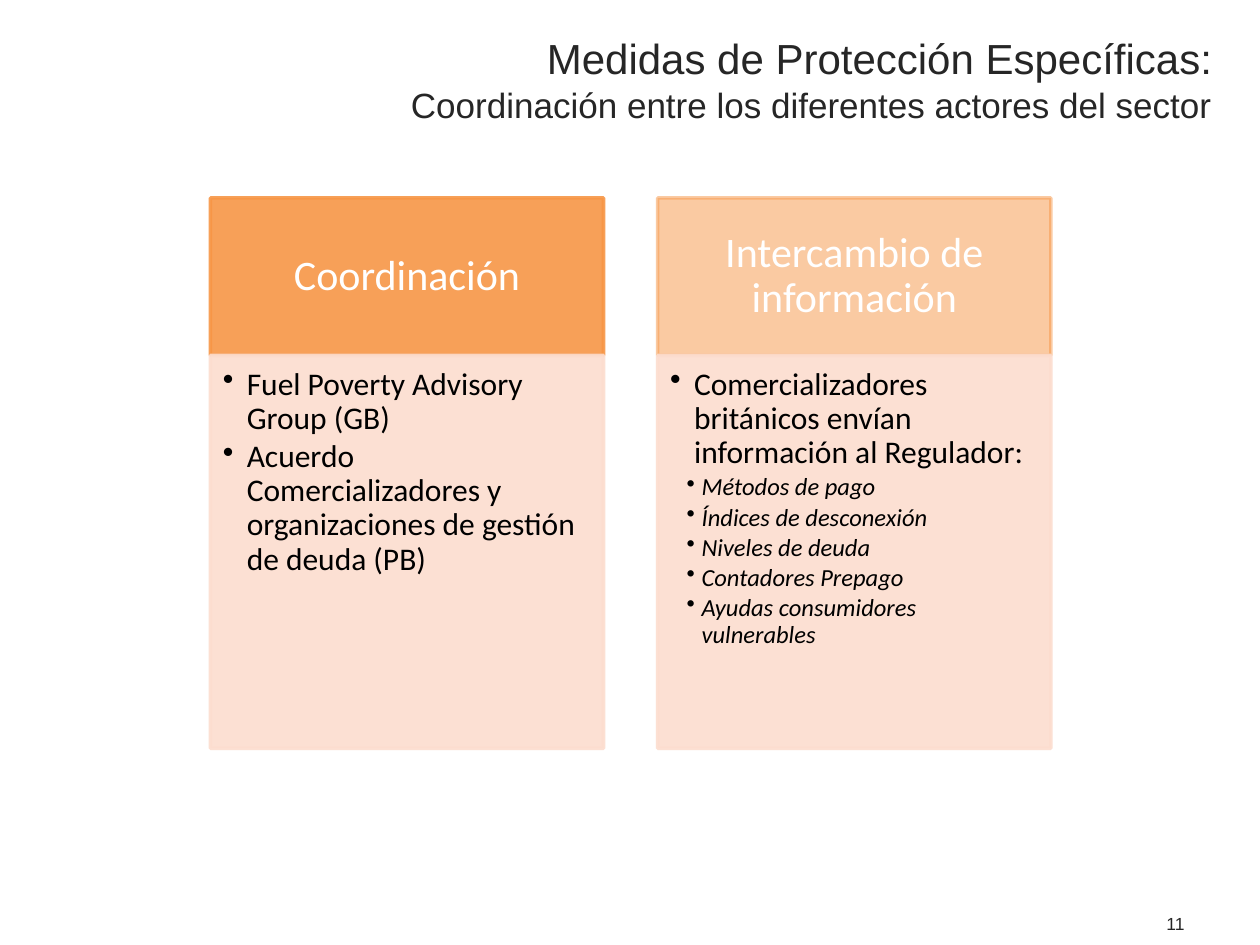
import lxml.etree
import pptx
import pptx.dml.color
import pptx.enum.shapes
import pptx.enum.text
import pptx.oxml.ns
import pptx.util

Inches = pptx.util.Inches
Pt = pptx.util.Pt
ALIGN = pptx.enum.text.PP_ALIGN
ANCHOR = pptx.enum.text.MSO_ANCHOR
ORANGE = pptx.dml.color.RGBColor(0xF7, 0x96, 0x46)
PEACH = pptx.dml.color.RGBColor(0xFC, 0xDD, 0xCF)
WHITE = pptx.dml.color.RGBColor(0xFF, 0xFF, 0xFF)
BLACK = pptx.dml.color.RGBColor(0x00, 0x00, 0x00)
CHARCOAL = pptx.dml.color.RGBColor(0x26, 0x26, 0x26)

COLUMN_WIDTH, COLUMN_GAP = 3.12, 0.43
HEADER_HEIGHT, BODY_HEIGHT = 1.25, 3.12
LEVELS = {
    1: {"size": 18, "italic": False, "margin": 0.19, "hanging": 0.19},
    2: {"size": 14, "italic": True, "margin": 0.25, "hanging": 0.12},
}
COLUMNS = [
    ("Coordinación", 90, [
        (1, "Fuel Poverty Advisory Group (GB)"),
        (1, "Acuerdo Comercializadores y organizaciones de gestión de deuda (PB)"),
    ]),
    ("Intercambio de información", 50, [
        (1, "Comercializadores británicos envían información al Regulador:"),
        (2, "Métodos de pago"),
        (2, "Índices de desconexión"),
        (2, "Niveles de deuda"),
        (2, "Contadores Prepago"),
        (2, "Ayudas consumidores vulnerables"),
    ]),
]


def apply_format(target, **values):
    """Set each given attribute on the target."""
    for name, value in values.items():
        setattr(target, name, value)


def add_run(paragraph, text, size, typeface, color, italic=False):
    """Append a formatted run to a paragraph."""
    run = paragraph.add_run()
    run.text = text
    apply_format(run.font, size=Pt(size), name=typeface, bold=False, italic=italic)
    run.font.color.rgb = color


def set_frame(frame, margins, anchor):
    """Set wrapping, anchor and left, top, right, bottom margins of a text frame."""
    left, top, right, bottom = (Inches(margin) for margin in margins)
    apply_format(frame, word_wrap=True, vertical_anchor=anchor,
                 auto_size=pptx.enum.text.MSO_AUTO_SIZE.NONE, margin_left=left,
                 margin_top=top, margin_right=right, margin_bottom=bottom)


def add_panel(slide, box, color, opacity):
    """Add a rectangle whose fill and line share a colour and an opacity percentage."""
    shape = slide.shapes.add_shape(
        pptx.enum.shapes.MSO_SHAPE.RECTANGLE, *map(Inches, box))
    shape.shadow.inherit = False
    shape.fill.solid()
    shape.line.width = Pt(2)
    for fill in (shape.fill, shape.line.fill):
        fill.solid()
        fill.fore_color.rgb = color
    for element in shape._element.spPr.iter(pptx.oxml.ns.qn("a:srgbClr")):
        lxml.etree.SubElement(
            element, pptx.oxml.ns.qn("a:alpha"), val=str(opacity * 1000))
    return shape


def add_header(slide, box, text, opacity):
    """Add the coloured heading of a column."""
    frame = add_panel(slide, box, ORANGE, opacity).text_frame
    set_frame(frame, (0.19, 0.11, 0.19, 0.11), ANCHOR.MIDDLE)
    paragraph = frame.paragraphs[0]
    apply_format(paragraph, alignment=ALIGN.CENTER, line_spacing=0.9)
    add_run(paragraph, text, 24, "Calibri", WHITE)


def add_bullets(slide, box, items):
    """Add the bulleted body of a column."""
    frame = add_panel(slide, box, PEACH, 90).text_frame
    set_frame(frame, (0.1, 0.1, 0.14, 0.16), ANCHOR.TOP)
    for index, (level, text) in enumerate(items):
        style = LEVELS[level]
        paragraph = frame.add_paragraph() if index else frame.paragraphs[0]
        apply_format(paragraph, level=level, alignment=ALIGN.LEFT, line_spacing=0.9,
                     space_after=Pt(style["size"] * 0.15))
        properties = paragraph._p.get_or_add_pPr()
        properties.set("marL", str(Inches(style["margin"])))
        properties.set("indent", str(-Inches(style["hanging"])))
        lxml.etree.SubElement(properties, pptx.oxml.ns.qn("a:buChar"), char="•")
        add_run(paragraph, text, style["size"], "Calibri", BLACK, style["italic"])


def add_column(slide, left, top, column):
    """Stack a heading on its bulleted body."""
    heading, opacity, items = column
    add_header(slide, (left, top, COLUMN_WIDTH, HEADER_HEIGHT), heading, opacity)
    add_bullets(slide, (left, top + HEADER_HEIGHT, COLUMN_WIDTH, BODY_HEIGHT), items)


def add_title(slide, box):
    """Place the title placeholder with its smaller second line."""
    title = slide.shapes.title
    apply_format(title, **dict(zip(("left", "top", "width", "height"), map(Inches, box))))
    set_frame(title.text_frame, (0.1, 0.05, 0.1, 0.05), ANCHOR.TOP)
    paragraph = title.text_frame.paragraphs[0]
    paragraph.alignment = ALIGN.RIGHT
    add_run(paragraph, "Medidas de Protección Específicas: ", 24, "Arial", CHARCOAL)
    add_run(paragraph, "Coordinación entre los diferentes actores del sector",
            20, "Arial", CHARCOAL)


def add_page_number(slide, box, number):
    """Add the page number at the right of its box."""
    frame = slide.shapes.add_textbox(*map(Inches, box)).text_frame
    set_frame(frame, (0.1, 0.05, 0.1, 0.05), ANCHOR.MIDDLE)
    paragraph = frame.paragraphs[0]
    paragraph.alignment = ALIGN.RIGHT
    add_run(paragraph, str(number), 10, "Arial", CHARCOAL)


def main():
    """Build and save the presentation."""
    presentation = pptx.Presentation()
    apply_format(presentation, slide_width=Inches(10), slide_height=Inches(7.5))
    slide = presentation.slides.add_slide(presentation.slide_layouts[5])
    add_page_number(slide, (7.17, 7.13, 2.33, 0.4), 11)
    add_title(slide, (2.89, 0.21, 6.83, 0.79))
    for index, column in enumerate(COLUMNS):
        add_column(slide, 1.67 + index * (COLUMN_WIDTH + COLUMN_GAP), 1.57, column)
    presentation.save("out.pptx")


if __name__ == "__main__":
    main()
